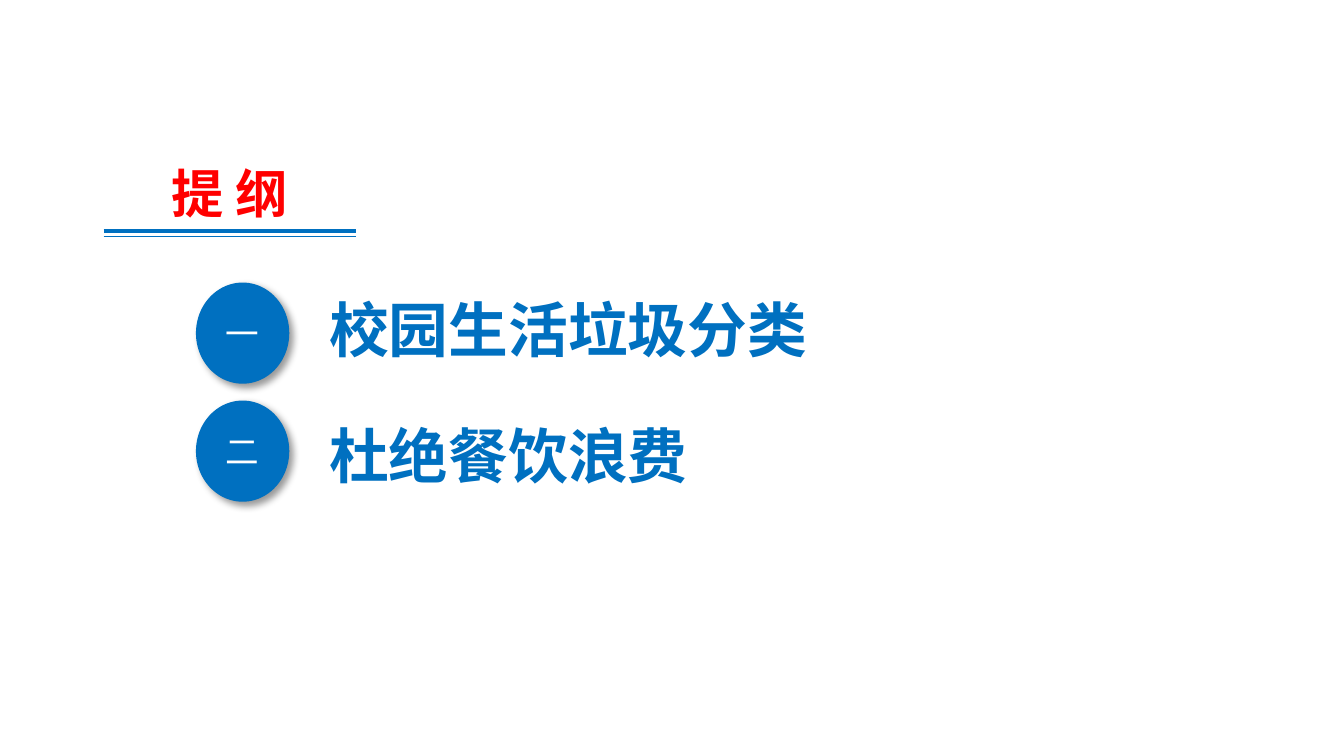
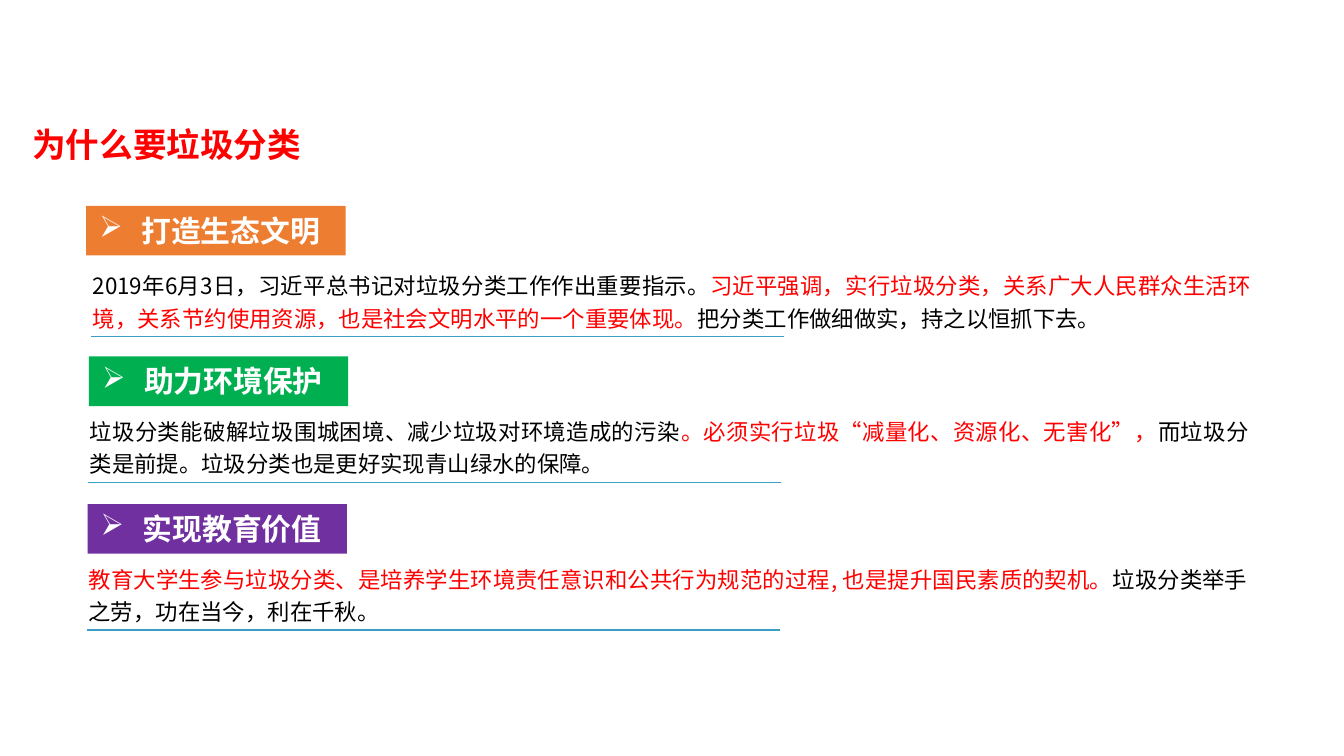
from lxml import etree
from pptx import Presentation
from pptx.dml.color import RGBColor
from pptx.enum import shapes, text
from pptx.oxml import ns
from pptx.util import Pt

FONT = "Noto Sans CJK SC"
COLORS = {
    "blue": "0070C0", "red": "FF0000", "white": "FFFFFF", "black": "000000",
    "orange": "ED7D31", "green": "00B050", "purple": "7030A0", "rule": "39A0C3",
}

OUTLINE_TITLE = "提 纲"
OUTLINE = [
    {"number": "一", "topic": "校园生活垃圾分类", "circle_top": 151.4, "topic_top": 153.4},
    {"number": "二", "topic": "杜绝餐饮浪费", "circle_top": 214.6, "topic_top": 221},
]

REASONS_TITLE = "为什么要垃圾分类"
REASONS = [
    {
        "heading": "打造生态文明", "color": "orange",
        "heading_at": (46.2, 110.3), "body_at": (42.6, 139.6),
        "body": [
            ("2019年6月3日，习近平总书记对垃圾分类工作作出重要指示。", "black"),
            ("习近平强调，实行垃圾分类，关系广大人民群众生活环境，关系节约使用资源，"
             "也是社会文明水平的一个重要体现。", "red"),
            ("把分类工作做细做实，持之以恒抓下去。", "black"),
        ],
    },
    {
        "heading": "助力环境保护", "color": "green",
        "heading_at": (47.6, 191), "body_at": (41, 217.6),
        "body": [
            ("垃圾分类能破解垃圾围城困境、减少垃圾对环境造成的污染", "black"),
            ("。必须实行垃圾“减量化、资源化、无害化”，", "red"),
            ("而垃圾分类是前提。垃圾分类也是更好实现青山绿水的保障。", "black"),
        ],
    },
    {
        "heading": "实现教育价值", "color": "purple",
        "heading_at": (46.9, 270.1), "body_at": (40.4, 296.8),
        "body": [
            ("教育大学生参与垃圾分类、是培养学生环境责任意识和公共行为规范的过程, "
             "也是提升国民素质的契机。", "red"),
            ("垃圾分类举手之劳，功在当今，利在千秋。", "black"),
        ],
    },
]


def rgb(name):
    return RGBColor.from_string(COLORS[name])


def add_element(parent, tag, **attributes):
    element = etree.SubElement(parent, ns.qn(tag))
    for key, value in attributes.items():
        element.set(key, str(value))
    return element


def write(shape, content, size=12, color="black", bold=False, align="LEFT",
          anchor="TOP", spacing=None, bullet=None, wrap=True):
    frame = shape.text_frame
    frame.auto_size = text.MSO_AUTO_SIZE.NONE
    frame.word_wrap = wrap
    frame.vertical_anchor = getattr(text.MSO_ANCHOR, anchor)
    paragraph = frame.paragraphs[0]
    paragraph.alignment = getattr(text.PP_ALIGN, align)
    if spacing:
        paragraph.line_spacing = spacing
    if bullet:
        properties = paragraph._p.get_or_add_pPr()
        properties.set("marL", str(Pt(22.5)))
        properties.set("indent", str(-Pt(22.5)))
        add_element(properties, "a:buChar", char=bullet)
    runs = [(content, color)] if isinstance(content, str) else content
    for words, run_color in runs:
        run = paragraph.add_run()
        run.text = words
        run.font.size = Pt(size)
        run.font.bold = bold
        run.font.color.rgb = rgb(run_color)
        run.font.name = FONT
        add_element(run._r.get_or_add_rPr(), "a:ea", typeface=FONT)


def add_title(slide, words, box, **style):
    title = slide.shapes.title
    title.left, title.top, title.width, title.height = map(Pt, box)
    write(title, words, color="red", bold=True, **style)


def add_text(slide, content, box, **style):
    write(slide.shapes.add_textbox(*map(Pt, box)), content, **style)


def add_filled(slide, kind, box, color):
    shape = slide.shapes.add_shape(kind, *map(Pt, box))
    shape.shadow.inherit = False
    shape.fill.solid()
    shape.fill.fore_color.rgb = rgb(color)
    shape.line.fill.background()
    return shape


def add_rule(slide, left, top, width, color, weight):
    line = slide.shapes.add_connector(
        shapes.MSO_CONNECTOR.STRAIGHT, Pt(left), Pt(top), Pt(left + width), Pt(top))
    line.line.color.rgb = rgb(color)
    line.line.width = Pt(weight)
    add_element(line._element.spPr, "a:effectLst")


def add_soft_shadow(shape):
    effects = shape._element.spPr.find(ns.qn("a:effectLst"))
    shadow = add_element(effects, "a:outerShdw", blurRad=Pt(4), dist=Pt(3),
                         dir=45 * 60000, algn="tl", rotWithShape=0)
    black = add_element(shadow, "a:srgbClr", val=COLORS["black"])
    add_element(black, "a:alpha", val=40000)


def build_outline(slide):
    add_title(slide, OUTLINE_TITLE, (20.9, 82.8, 203.8, 41), size=28, align="CENTER")
    for top, weight in ((123.8, 2.25), (126.7, 0.25)):
        add_rule(slide, 55.5, top, 135.3, "blue", weight)
    for item in OUTLINE:
        circle = add_filled(slide, shapes.MSO_SHAPE.OVAL,
                            (105, item["circle_top"], 50, 54.2), "blue")
        add_soft_shadow(circle)
        write(circle, item["number"], size=18, color="white", align="CENTER", anchor="MIDDLE")
        add_text(slide, item["topic"], (169.2, item["topic_top"], 378, 48),
                 size=32, color="blue", bold=True)


def build_reasons(slide):
    add_title(slide, REASONS_TITLE, (10.1, 62.6, 159.8, 28.8), size=18, wrap=False)
    for reason in REASONS:
        heading = add_filled(slide, shapes.MSO_SHAPE.RECTANGLE,
                             (*reason["heading_at"], 139, 26.6), reason["color"])
        write(heading, reason["heading"], size=16, color="white", bold=True, bullet="➢")
        left, top = reason["body_at"]
        add_text(slide, reason["body"], (left, top, 635, 42.5), align="JUSTIFY", spacing=1.2)
        add_rule(slide, left + 6.4, top + 40.8, 370.8, "rule", 0.75)


def main():
    presentation = Presentation()
    presentation.slide_width, presentation.slide_height = Pt(720), Pt(405)
    title_only = presentation.slide_layouts[5]
    for build in (build_outline, build_reasons):
        build(presentation.slides.add_slide(title_only))
    presentation.save("out.pptx")


if __name__ == "__main__":
    main()
